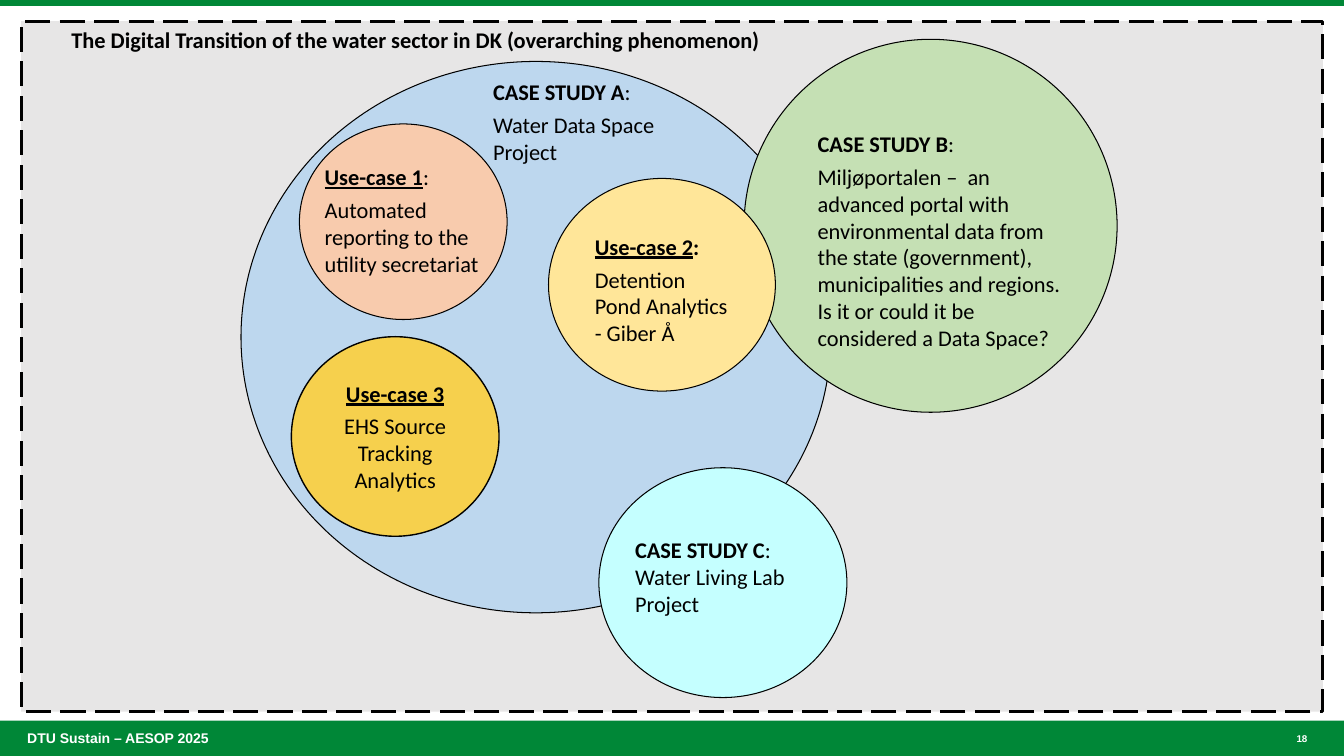
from dataclasses import dataclass

from pptx import Presentation
from pptx.dml.color import RGBColor
from pptx.enum.dml import MSO_LINE
from pptx.enum.shapes import MSO_SHAPE
from pptx.enum.text import MSO_ANCHOR, MSO_AUTO_SIZE, PP_ALIGN
from pptx.shapes.autoshape import Shape
from pptx.slide import Slide
from pptx.text.text import TextFrame
from pptx.util import Emu, Pt

PX = 9144  # 100 px to the inch
GREEN, GREY, BLACK, WHITE = "008737", "E7E6E6", "000000", "FFFFFF"

Box = tuple[int, int, int, int]


@dataclass
class Circle:
    box: Box
    fill: str
    head: str
    body: str
    tail: str = ":"  # follows the heading
    text: Box | None = None  # None: text sits in the circle itself
    under: bool = False
    bold: bool = False  # weight of the tail
    pad: tuple[int, int] = (0, 0)
    gap: float = 4.3
    width: float = 0.75


CIRCLES = [
    Circle((239, 61, 585, 547), "BDD7EE", "CASE STUDY A",
           "Water Data Space Project", text=(489, 78, 181, 86)),
    Circle((297, 123, 206, 194), "F8CBAD", "Use-case 1",
           "Automated reporting to the utility secretariat",
           text=(322, 162, 181, 113), under=True),
    Circle((738, 39, 370, 370), "C5E0B4", "CASE STUDY B",
           "Miljøportalen –  an advanced portal with environmental data from "
           "the state (government), municipalities and regions. "
           "Is it or could it be considered a Data Space?",
           text=(811, 129, 244, 221)),
    Circle((544, 177, 225, 211), "FFE699", "Use-case 2",
           "Detention Pond Analytics - Giber Å",
           text=(590, 231, 134, 113), under=True, bold=True),
    Circle((289, 334, 206, 198), "F6D04D", "Use-case 3",
           "EHS Source Tracking Analytics", tail="", under=True,
           pad=(10, 5), width=1),
    Circle((594, 464, 246, 228), "C5FFFF", "CASE STUDY C",
           "Water Living Lab Project", text=(620, 527, 199, 91),
           pad=(10, 5), gap=0),
]


def color(code: str) -> RGBColor:
    return RGBColor.from_string(code)


def scale(box: Box) -> list[Emu]:
    return [Emu(n * PX) for n in box]


def draw(slide: Slide, kind: MSO_SHAPE, box: Box, fill: str,
         width: float = 0) -> Shape:
    shape = slide.shapes.add_shape(kind, *scale(box))
    shape.shadow.inherit = False
    shape.fill.solid()
    shape.fill.fore_color.rgb = color(fill)
    if width:
        shape.line.color.rgb = color(BLACK)
        shape.line.width = Pt(width)
    else:
        shape.line.fill.background()
    return shape


def inset(frame: TextFrame, pad: tuple[int, int]) -> None:
    frame.margin_left = frame.margin_right = Emu(pad[0] * PX)
    frame.margin_top = frame.margin_bottom = Emu(pad[1] * PX)


def style(run, size: float, code: str = BLACK, face: str = "Calibri",
          bold: bool = False, under: bool = False) -> None:
    font = run.font
    font.size, font.name = Pt(size), face
    font.bold, font.underline = bold, under
    font.color.rgb = color(code)


def label(slide: Slide, box: Box, text: str, size: float, code: str,
          face: str, pad: tuple[int, int], wrap: bool = True) -> TextFrame:
    frame = slide.shapes.add_textbox(*scale(box)).text_frame
    frame.text = text
    frame.word_wrap = wrap
    inset(frame, pad)
    style(frame.paragraphs[0].runs[0], size, code, face, True)
    return frame


def circle(slide: Slide, item: Circle) -> None:
    shape = draw(slide, MSO_SHAPE.OVAL, item.box, item.fill, item.width)
    if item.text:
        frame = slide.shapes.add_textbox(*scale(item.text)).text_frame
        frame.auto_size = MSO_AUTO_SIZE.SHAPE_TO_FIT_TEXT
        frame.vertical_anchor = MSO_ANCHOR.TOP
        align = PP_ALIGN.LEFT
    else:
        frame = shape.text_frame
        frame.vertical_anchor = MSO_ANCHOR.MIDDLE
        align = PP_ALIGN.CENTER
    frame.word_wrap = True
    inset(frame, item.pad)

    # Heading, its tail, then the description
    frame.text = f"{item.head}\n{item.body}"
    head, body = frame.paragraphs
    head.alignment = body.alignment = align
    body.space_before = Pt(item.gap)
    style(head.runs[0], 16, bold=True, under=item.under)
    style(body.runs[0], 16)
    if item.tail:
        run = head.add_run()
        run.text = item.tail
        style(run, 16, bold=item.bold)


def main() -> None:
    deck = Presentation()
    deck.slide_width, deck.slide_height = Emu(1333 * PX), Emu(750 * PX)
    slide = deck.slides.add_slide(deck.slide_layouts[6])

    # Green bands with footer and page number
    draw(slide, MSO_SHAPE.RECTANGLE, (0, 715, 1333, 35), GREEN)
    draw(slide, MSO_SHAPE.RECTANGLE, (0, 0, 1333, 6), GREEN)
    for left, width, text, size in ((27, 485, "DTU Sustain – AESOP 2025", 10),
                                    (1286, 47, "18", 7)):
        frame = label(slide, (left, 715, width, 35), text, size, WHITE,
                      "Arial", (0, 0))
        frame.vertical_anchor = MSO_ANCHOR.MIDDLE

    # Dashed field and its title
    field = draw(slide, MSO_SHAPE.RECTANGLE, (21, 21, 1291, 685), GREY, 2.25)
    field.line.dash_style = MSO_LINE.LONG_DASH
    title = "The Digital Transition of the water sector in DK (overarching phenomenon)"

    # Circles, back to front
    for item in CIRCLES:
        circle(slide, item)
    label(slide, (61, 21, 712, 37), title, 16, BLACK, "Calibri", (10, 5), False)

    deck.save("out.pptx")


if __name__ == "__main__":
    main()
